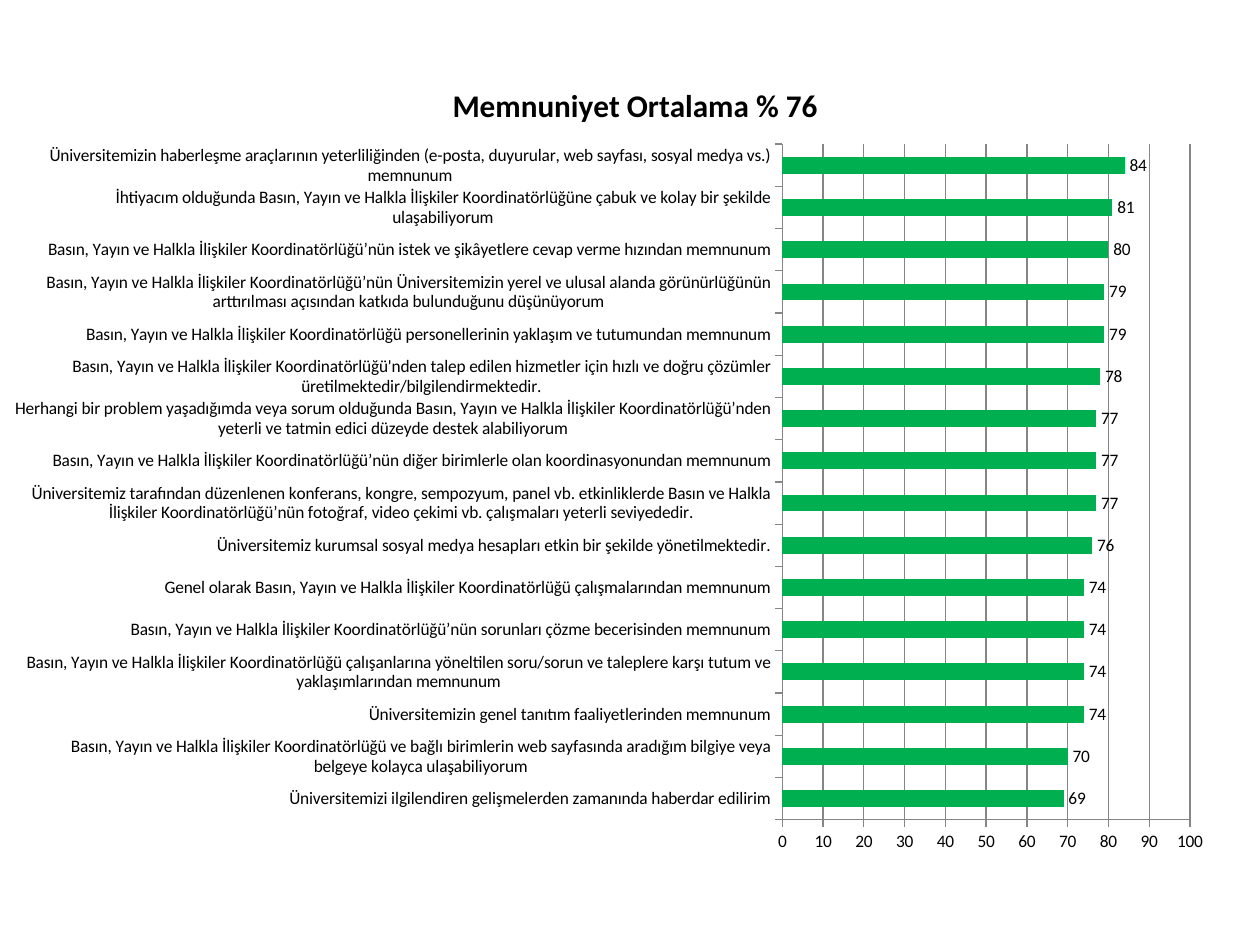
import pptx
import pptx.util
import pptx.chart.data
import pptx.dml.color
import pptx.enum.chart
import pptx.oxml
import pptx.oxml.ns

MEAN = "Memnuniyet Ortalama % 76"
UNIT = "Basın, Yayın ve Halkla İlişkiler Koordinatörlüğü"

# Survey statements and scores, from the bottom bar up
ROWS = [
    ("Üniversitemizi ilgilendiren gelişmelerden zamanında haberdar edilirim", 69),
    (f"{UNIT} ve bağlı birimlerin web sayfasında aradığım bilgiye veya belgeye "
     "kolayca ulaşabiliyorum", 70),
    ("Üniversitemizin genel tanıtım faaliyetlerinden memnunum", 74),
    (f"{UNIT} çalışanlarına yöneltilen soru/sorun ve taleplere karşı tutum ve "
     "yaklaşımlarından memnunum", 74),
    (f"{UNIT}’nün sorunları çözme becerisinden memnunum", 74),
    (f"Genel olarak {UNIT} çalışmalarından memnunum", 74),
    ("Üniversitemiz kurumsal sosyal medya hesapları etkin bir şekilde "
     "yönetilmektedir.", 76),
    ("Üniversitemiz tarafından düzenlenen konferans, kongre, sempozyum, panel vb. "
     "etkinliklerde Basın ve Halkla İlişkiler Koordinatörlüğü’nün fotoğraf, video "
     "çekimi vb. çalışmaları yeterli seviyededir.", 77),
    (f"{UNIT}’nün diğer birimlerle olan koordinasyonundan memnunum", 77),
    (f"Herhangi bir problem yaşadığımda veya sorum olduğunda {UNIT}’nden yeterli "
     "ve tatmin edici düzeyde destek alabiliyorum", 77),
    (f"{UNIT}'nden talep edilen hizmetler için hızlı ve doğru çözümler "
     "üretilmektedir/bilgilendirmektedir.", 78),
    (f"{UNIT} personellerinin yaklaşım ve tutumundan memnunum", 79),
    (f"{UNIT}’nün Üniversitemizin yerel ve ulusal alanda görünürlüğünün "
     "arttırılması açısından katkıda bulunduğunu düşünüyorum", 79),
    (f"{UNIT}’nün istek ve şikâyetlere cevap verme hızından memnunum", 80),
    (f"İhtiyacım olduğunda {UNIT}ne çabuk ve kolay bir şekilde "
     "ulaşabiliyorum", 81),
    ("Üniversitemizin haberleşme araçlarının yeterliliğinden (e-posta, duyurular, "
     "web sayfası, sosyal medya vs.) memnunum", 84),
]


def tint(code):
    return pptx.dml.color.RGBColor.from_string(code)


def style(font, size=10, bold=False, color="000000", face="Calibri"):
    font.size = pptx.util.Pt(size)
    font.bold = bold
    font.name = face
    font.color.rgb = tint(color)


def write(frame, text, **form):
    frame.text = text
    style(frame.paragraphs[0].runs[0].font, **form)


def place(node, inner=False, **share):
    """Fix a chart part at shares (x, y, w, h) of the chart's size."""
    old = node.find(pptx.oxml.ns.qn("c:layout"))
    spot = 0 if old is None else node.index(old)
    if old is not None:
        node.remove(old)
    tags = '<c:layoutTarget val="inner"/>' if inner else ""
    tags += "".join(f'<c:{key}Mode val="edge"/>' for key in "xy")
    tags += "".join(f'<c:{key} val="{val}"/>' for key, val in share.items())
    node.insert(spot, pptx.oxml.parse_xml(
        f'<c:layout {pptx.oxml.ns.nsdecls("c")}>'
        f"<c:manualLayout>{tags}</c:manualLayout></c:layout>"))


class Deck:
    bar = "00B050"
    rule = "868686"

    def __init__(self, wide, high):
        self.file = pptx.Presentation()
        self.file.slide_width = pptx.util.Inches(wide)
        self.file.slide_height = pptx.util.Inches(high)
        self.page = self.file.slides.add_slide(self.file.slide_layouts[6])

    def line(self, line):
        line.color.rgb = tint(self.rule)
        line.width = pptx.util.Pt(0.75)

    def chart(self, x, y, w, h, title, rows):
        """Add a bar chart; the box is in inches."""
        data = pptx.chart.data.CategoryChartData(number_format="0")
        data.categories = [name for name, score in rows]
        data.add_series(title, [score for name, score in rows])
        box = [pptx.util.Inches(v) for v in (x, y, w, h)]
        chart = self.page.shapes.add_chart(
            pptx.enum.chart.XL_CHART_TYPE.BAR_CLUSTERED, *box, data).chart
        style(chart.font)
        chart.has_legend = False

        # Heading
        chart.has_title = True
        write(chart.chart_title.text_frame, title, size=18, bold=True)
        chart.chart_title.include_in_layout = False

        # Bars and their values
        plot = chart.plots[0]
        plot.gap_width = 150
        plot.vary_by_categories = False
        fill = plot.series[0].format.fill
        fill.solid()
        fill.fore_color.rgb = tint(self.bar)
        plot.has_data_labels = True
        tags = plot.data_labels
        tags.show_value = True
        tags.number_format = "0"
        tags.number_format_is_linked = False
        tags.position = pptx.enum.chart.XL_LABEL_POSITION.OUTSIDE_END
        style(tags.font)

        # Axes
        for axis in (chart.category_axis, chart.value_axis):
            axis.major_tick_mark = pptx.enum.chart.XL_TICK_MARK.OUTSIDE
            axis.minor_tick_mark = pptx.enum.chart.XL_TICK_MARK.NONE
            self.line(axis.format.line)
            style(axis.tick_labels.font)
        scale = chart.value_axis
        scale.minimum_scale, scale.maximum_scale = 0, 100
        scale.major_unit = 10
        scale.tick_labels.number_format = "0"
        scale.tick_labels.number_format_is_linked = False
        scale.has_major_gridlines = True
        self.line(scale.major_gridlines.format.line)
        return chart


def main():
    deck = Deck(10, 7.5)
    chart = deck.chart(0.12, 0.36, 9.61, 6.54, MEAN, ROWS)

    # Room for the long statements left of the bars
    space = chart.element.chart
    place(space.find(pptx.oxml.ns.qn("c:title")), x=0.35, y=0.04)
    place(space.plotArea, inner=True, x=0.63, y=0.12, w=0.34, h=0.82)
    deck.file.save("out.pptx")


if __name__ == "__main__":
    main()
